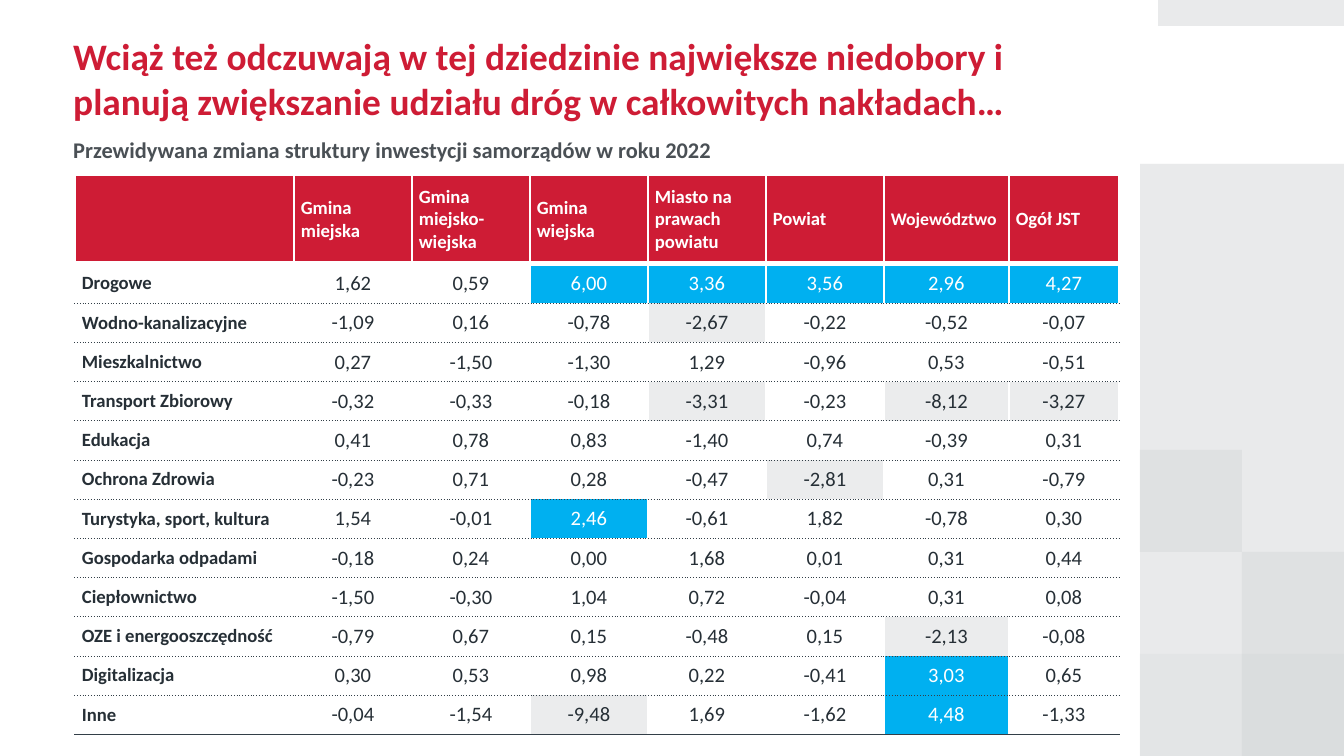
from lxml.etree import SubElement
from pptx import Presentation
from pptx.dml.color import RGBColor
from pptx.enum.shapes import MSO_SHAPE
from pptx.enum.text import MSO_ANCHOR, PP_ALIGN
from pptx.oxml.ns import qn
from pptx.util import Inches, Pt

W, H = 1344, 756
SCALE = Inches(10) / W
FONT = "Calibri"
RED, BLUE, GREY, WHITE = "CE1C35", "00B0F0", "EBECED", "FFFFFF"
INK, RULE, SUBTITLE = "262F36", "333F48", "4A5055"
THRESHOLD = 2  # changes at least this large are highlighted

COLUMNS = ["", "Gmina miejska", "Gmina miejsko-wiejska", "Gmina wiejska",
           "Miasto na prawach powiatu", "Powiat", "Województwo", "Ogół JST"]
COL_WIDTHS = [219] + [118] * 5 + [125, 110]
ROWS = [
    ("Drogowe", "1,62 0,59 6,00 3,36 3,56 2,96 4,27"),
    ("Wodno-kanalizacyjne", "-1,09 0,16 -0,78 -2,67 -0,22 -0,52 -0,07"),
    ("Mieszkalnictwo", "0,27 -1,50 -1,30 1,29 -0,96 0,53 -0,51"),
    ("Transport Zbiorowy", "-0,32 -0,33 -0,18 -3,31 -0,23 -8,12 -3,27"),
    ("Edukacja", "0,41 0,78 0,83 -1,40 0,74 -0,39 0,31"),
    ("Ochrona Zdrowia", "-0,23 0,71 0,28 -0,47 -2,81 0,31 -0,79"),
    ("Turystyka, sport, kultura", "1,54 -0,01 2,46 -0,61 1,82 -0,78 0,30"),
    ("Gospodarka odpadami", "-0,18 0,24 0,00 1,68 0,01 0,31 0,44"),
    ("Ciepłownictwo", "-1,50 -0,30 1,04 0,72 -0,04 0,31 0,08"),
    ("OZE i energooszczędność", "-0,79 0,67 0,15 -0,48 0,15 -2,13 -0,08"),
    ("Digitalizacja", "0,30 0,53 0,98 0,22 -0,41 3,03 0,65"),
    ("Inne", "-0,04 -1,54 -9,48 1,69 -1,62 4,48 -1,33"),
]


def px(n):
    return round(n * SCALE)


def rgb(color):
    return RGBColor.from_string(color)


def add_run(p, text, size, color, bold=True):
    r = p.add_run()
    r.text = text
    r.font.name = FONT
    r.font.size = Pt(size)
    r.font.bold = bold
    r.font.color.rgb = rgb(color)


def add_text(slide, box, text, size, color, anchor):
    tf = slide.shapes.add_textbox(*map(px, box)).text_frame
    tf.word_wrap = True
    tf.vertical_anchor = anchor
    add_run(tf.paragraphs[0], text, size, color)


def add_block(slide, box, color, opacity):
    sp = slide.shapes.add_shape(MSO_SHAPE.RECTANGLE, *map(px, box))
    sp.shadow.inherit = False
    sp.line.fill.background()
    sp.fill.solid()
    sp.fill.fore_color.rgb = rgb(color)
    clr = sp.fill._xPr.find(qn("a:solidFill"))[0]
    SubElement(clr, qn("a:alpha"), val=str(opacity * 1000))


def add_side_blocks(slide, x, y, w, h):
    """Translucent panels and tiles along the right edge."""
    tile, panel_top = 102, 164
    add_block(slide, (x, y + panel_top, w, h - panel_top), "E4E5E6", 80)
    add_block(slide, (x + 18, y, w - 18, 26), "E4E5E6", 80)
    for col, row, opacity in [(1, 2, 80), (0, 2, 30), (1, 1, 50), (0, 0, 50)]:
        box = (x + col * tile, y + 450 + row * tile, tile, tile)
        add_block(slide, box, "D7DADB", opacity)


def set_borders(cell, top, bottom):
    """Each border is (colour, width in points, dash)."""
    side = (WHITE, 1, "solid")
    tcPr = cell._tc.get_or_add_tcPr()
    for tag, border in zip(("lnL", "lnR", "lnT", "lnB"), (side, side, top, bottom)):
        color, width, dash = border
        ln = SubElement(tcPr, qn("a:" + tag), w=str(Pt(width)))
        fill = SubElement(ln, qn("a:solidFill"))
        SubElement(fill, qn("a:srgbClr"), val=color)
        SubElement(ln, qn("a:prstDash"), val=dash)


def fill_cell(cell, text, size, color, fill=None, bold=True, centred=False):
    if fill:
        cell.fill.solid()
        cell.fill.fore_color.rgb = rgb(fill)
    else:
        cell.fill.background()
    cell.vertical_anchor = MSO_ANCHOR.MIDDLE
    margin = 0 if centred else px(7)
    cell.margin_left = cell.margin_right = margin
    cell.margin_top = cell.margin_bottom = margin
    p = cell.text_frame.paragraphs[0]
    p.alignment = PP_ALIGN.CENTER if centred else PP_ALIGN.LEFT
    if text:
        add_run(p, text, size, color, bold)


def value_colors(text):
    value = float(text.replace(",", "."))
    if value >= THRESHOLD:
        return WHITE, BLUE
    return INK, GREY if value <= -THRESHOLD else None


def add_change_table(slide, x, y, w, h):
    header_h = 89
    frame = slide.shapes.add_table(len(ROWS) + 1, len(COLUMNS), *map(px, (x, y, w, h)))
    tbl = frame.table
    tbl.horz_banding = False
    for col, width in zip(tbl.columns, COL_WIDTHS):
        col.width = px(width)
    for row in tbl.rows:
        row.height = px(h - header_h) // len(ROWS)
    tbl.rows[0].height = px(header_h)

    # Header row
    thin, thick = (WHITE, 1, "solid"), (WHITE, 3, "solid")
    for i, name in enumerate(COLUMNS):
        cell = tbl.cell(0, i)
        set_borders(cell, thin, thick)
        fill_cell(cell, name, 9.5 if name == "Województwo" else 10, WHITE, RED)

    # Investment categories
    dotted, closing = (RULE, 0.5, "sysDot"), (RULE, 1, "solid")
    for i, (name, values) in enumerate(ROWS, 1):
        for j, text in enumerate([name] + values.split()):
            cell = tbl.cell(i, j)
            set_borders(cell, thick if i == 1 else dotted,
                        closing if i == len(ROWS) else dotted)
            if j == 0:
                fill_cell(cell, text, 10, INK)
            else:
                color, fill = value_colors(text)
                fill_cell(cell, text, 11, color, fill, bold=False, centred=True)


def main():
    prs = Presentation()
    prs.slide_width, prs.slide_height = px(W), px(H)
    slide = prs.slides.add_slide(prs.slide_layouts[6])

    add_side_blocks(slide, 1140, 0, 204, H)

    # Title and subtitle
    add_text(slide, (60, 27, 1014, 102),
             "Wciąż też odczuwają w tej dziedzinie największe niedobory i "
             "planują zwiększanie udziału dróg w całkowitych nakładach…",
             20, RED, MSO_ANCHOR.MIDDLE)
    add_text(slide, (60, 130, 778, 41),
             "Przewidywana zmiana struktury inwestycji samorządów w roku 2022",
             12, SUBTITLE, MSO_ANCHOR.TOP)

    add_change_table(slide, 75, 175, sum(COL_WIDTHS), 560)
    prs.save("out.pptx")


if __name__ == "__main__":
    main()
